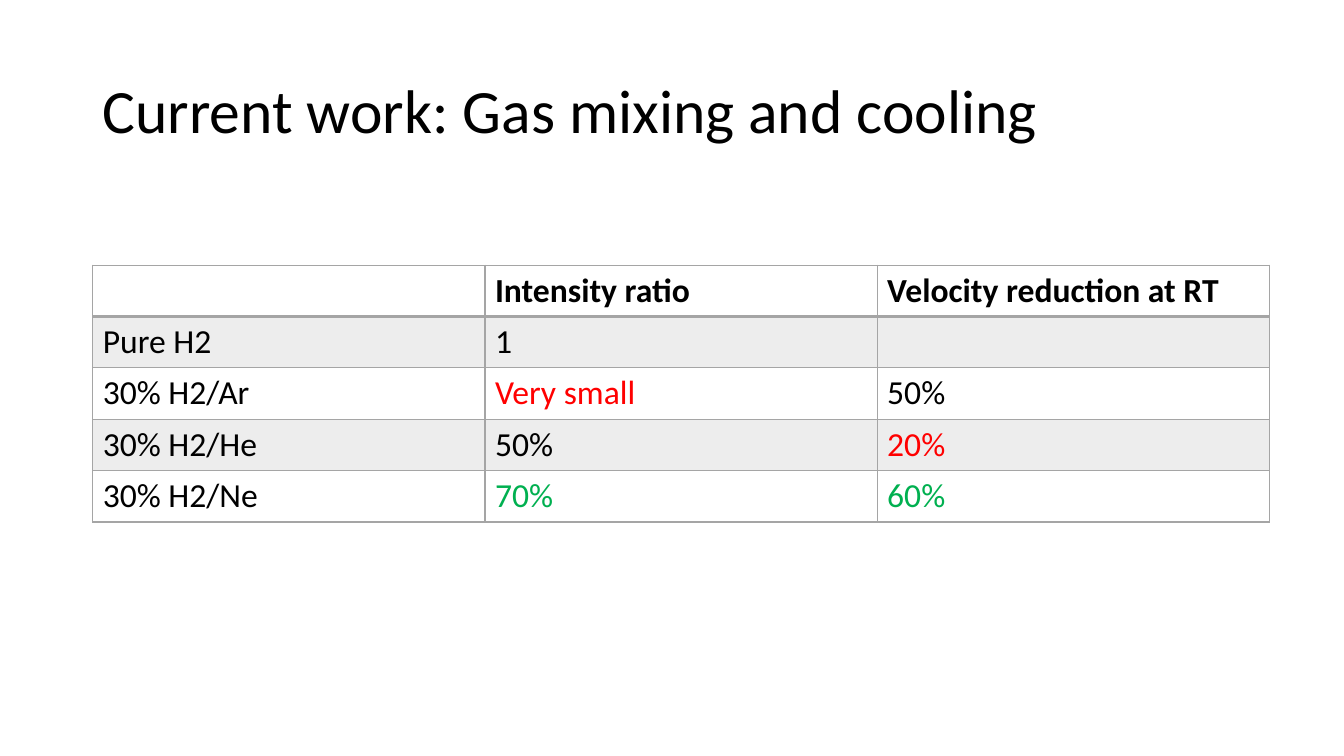
from lxml import etree
from pptx import Presentation
from pptx.dml.color import RGBColor
from pptx.enum.text import MSO_ANCHOR
from pptx.oxml.ns import qn
from pptx.util import Inches, Pt

MIDDLE = MSO_ANCHOR.MIDDLE
FONT = "Calibri"
BLACK, RED, GREEN = "000000", "FF0000", "00B050"
GRID_GREY, BAND_GREY = "A5A5A5", "EDEDED"
LEFT = 0.92
COLUMN_WIDTH, ROW_HEIGHT = 3.89, 0.51

GAS_ROWS = [
    ["", "Intensity ratio", "Velocity reduction at RT"],
    ["Pure H2", "1", ""],
    ["30% H2/Ar", "Very small", "50%"],
    ["30% H2/He", "50%", "20%"],
    ["30% H2/Ne", "70%", "60%"],
]
RATING_COLORS = {(2, 1): RED, (3, 2): RED, (4, 1): GREEN, (4, 2): GREEN}


def color(hex_text):
    """Turn a hex string into a colour."""
    return RGBColor.from_string(hex_text)


def write_text(frame, text, size=24, ink=BLACK, bold=False, line_spacing=None):
    """Write one formatted paragraph into a text frame."""
    para = frame.paragraphs[0]
    para.line_spacing = line_spacing
    span = para.add_run()
    span.text = text
    span.font.name = FONT
    span.font.size = Pt(size)
    span.font.bold = bold
    span.font.color.rgb = color(ink)


def add_title(page, text):
    """Add the vertically centred slide title."""
    box = page.shapes.add_textbox(Inches(LEFT), Inches(0.4), Inches(11.5), Inches(1.45))
    frame = box.text_frame
    frame.word_wrap = True
    frame.vertical_anchor = MIDDLE
    write_text(frame, text, size=44, line_spacing=0.9)


def add_border(cell, side, width):
    """Draw one side of a cell's border."""
    properties = cell._tc.get_or_add_tcPr()
    line = etree.SubElement(properties, qn(f"a:ln{side}"), w=str(Pt(width)))
    fill = etree.SubElement(line, qn("a:solidFill"))
    etree.SubElement(fill, qn("a:srgbClr"), val=GRID_GREY)


def style_cell(cell, row):
    """Give a cell its borders and its band."""
    widths = {"L": 1, "R": 1, "T": 2 if row == 1 else 1, "B": 2 if row == 0 else 1}
    for side, width in widths.items():
        add_border(cell, side, width)
    if row % 2:
        cell.fill.solid()
        cell.fill.fore_color.rgb = color(BAND_GREY)
    else:
        cell.fill.background()


def add_gas_table(page, rows):
    """Add the table that compares the gas mixtures."""
    column_count = len(rows[0])
    table = page.shapes.add_table(
        len(rows), column_count, Inches(LEFT), Inches(2.63),
        Inches(COLUMN_WIDTH * column_count), Inches(ROW_HEIGHT * len(rows)),
    ).table
    table.first_row = False
    table.horz_banding = False
    for row, texts in enumerate(rows):
        for column, text in enumerate(texts):
            cell = table.cell(row, column)
            style_cell(cell, row)
            if text:
                ink = RATING_COLORS.get((row, column), BLACK)
                write_text(cell.text_frame, text, ink=ink, bold=row == 0)


def main():
    """Build and save the slide."""
    deck = Presentation()
    deck.slide_width, deck.slide_height = Inches(13.33), Inches(7.5)
    page = deck.slides.add_slide(deck.slide_layouts[6])
    add_title(page, "Current work: Gas mixing and cooling")
    add_gas_table(page, GAS_ROWS)
    deck.save("out.pptx")


if __name__ == "__main__":
    main()
